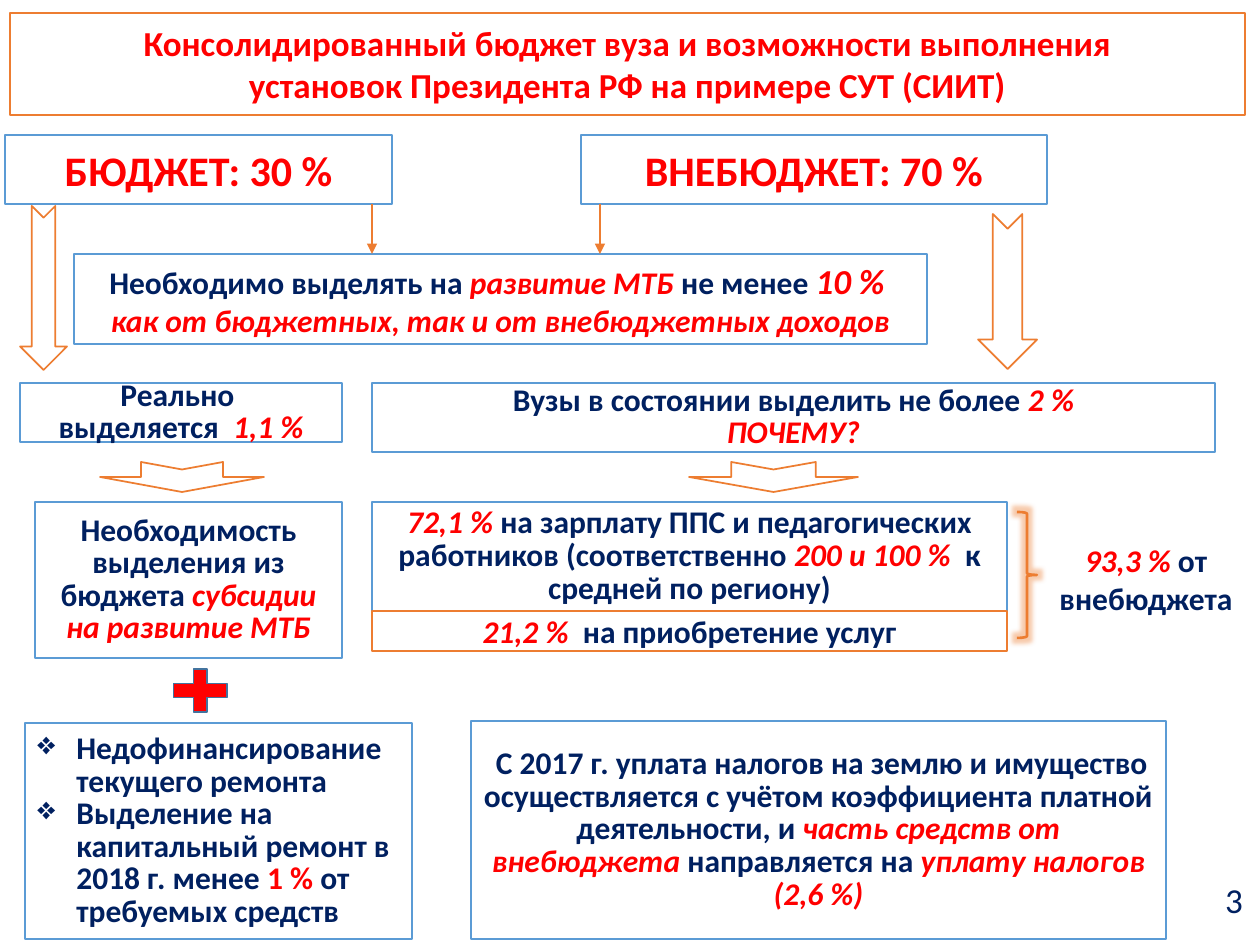
import pptx
import pptx.util
import pptx.dml.color
import pptx.enum.shapes
import pptx.enum.text
import pptx.oxml
import pptx.oxml.ns

RGBColor = pptx.dml.color.RGBColor
WHITE = RGBColor(0xFF, 0xFF, 0xFF)
RED = RGBColor(0xFF, 0x00, 0x00)
NAVY = RGBColor(0x00, 0x20, 0x60)
BLUE = RGBColor(0x5B, 0x9B, 0xD5)
DARK_BLUE = RGBColor(0x43, 0x73, 0x9E)
ORANGE = RGBColor(0xED, 0x7D, 0x31)

SHAPE = pptx.enum.shapes.MSO_SHAPE
ALIGN = pptx.enum.text.PP_ALIGN
NAMESPACE = pptx.oxml.ns.nsdecls("a")
PX_PER_INCH = 126
TIGHT = 18.6

PLAIN = {"color": NAVY, "size": 18, "bold": True, "italic": False}
STRONG = {**PLAIN, "color": RED}
ACCENT = {**STRONG, "italic": True}
ACCENT_LARGE = {**ACCENT, "size": 20}
TITLE = {**STRONG, "size": 20}
HEADING = {**STRONG, "size": 24}
NUMBER = {**PLAIN, "size": 20, "bold": False}

BOXES = [
    ((10, 13, 1235, 102), ORANGE, None, [
        [("Консолидированный бюджет вуза и возможности выполнения", TITLE)],
        [("установок Президента РФ на примере СУТ (СИИТ)", TITLE)]]),
    ((5, 135, 387, 69), BLUE, None, [[("БЮДЖЕТ: 30 %", HEADING)]]),
    ((581, 135, 466, 69), BLUE, None, [[("ВНЕБЮДЖЕТ: 70 %", HEADING)]]),
    ((74, 254, 853, 90), BLUE, None, [
        [("Необходимо выделять на ", PLAIN), ("развитие МТБ ", ACCENT),
         ("не менее ", PLAIN), ("10 %", ACCENT_LARGE),
         ("  как от бюджетных, так и от внебюджетных доходов", ACCENT)]]),
    ((20, 383, 322, 59), BLUE, TIGHT, [
        [("Реально ", PLAIN)],
        [("выделяется  ", PLAIN), ("1,1 %", ACCENT)]]),
    ((35, 502, 307, 156), BLUE, TIGHT, [
        [("Необходимость выделения из бюджета ", PLAIN),
         ("субсидии на развитие МТБ", ACCENT)]]),
    ((372, 383, 843, 69), BLUE, TIGHT, [
        [("Вузы в состоянии выделить не более ", PLAIN), ("2 %", ACCENT)],
        [("ПОЧЕМУ?", ACCENT)]]),
    ((372, 502, 635, 109), BLUE, TIGHT, [
        [("72,1 % ", ACCENT),
         ("на зарплату ППС и педагогических работников (соответственно ", PLAIN),
         ("200 и 100 %  ", ACCENT), ("к средней по региону)", PLAIN)]]),
    ((372, 611, 635, 40), ORANGE, None, [
        [("21,2 %", ACCENT), ("  на приобретение услуг", PLAIN)]]),
    ((1047, 516, 198, 126), None, None, [
        [("93,3 %", ACCENT), (" от", PLAIN)],
        [("внебюджета", PLAIN)]]),
    ((471, 721, 695, 218), BLUE, TIGHT, [
        [(" С 2017 г. уплата налогов на землю и имущество осуществляется "
          "с учётом коэффициента платной деятельности, и ", PLAIN),
         ("часть средств от внебюджета ", ACCENT),
         ("направляется на ", PLAIN), ("уплату налогов (2,6 %)", ACCENT)]]),
]
BULLET_BOX = ((25, 723, 387, 216), BLUE, TIGHT, [
    [("Недофинансирование текущего ремонта", PLAIN)],
    [("Выделение на капитальный ремонт в 2018 г. менее ", PLAIN),
     ("1 % ", STRONG), ("от требуемых средств", PLAIN)]])
PAGE_NUMBER = ((1213, 882, 42, 34), None, None, [[("3", NUMBER)]])

DOWN_ARROWS = [(20, 206, 47, 164), (100, 462, 164, 30),
               (978, 214, 59, 155), (689, 462, 169, 30)]
CONNECTOR_XS = (372, 600)
CONNECTOR_TOP, CONNECTOR_BOTTOM = 204, 254
BRACE = (1017, 512, 20, 126)
PLUS = (164, 661, 73, 59)


def px(value):
    return pptx.util.Emu(round(value * 914400 / PX_PER_INCH))


def add_outline(slide, kind, bounds, line, fill=WHITE, width=1):
    shape = slide.shapes.add_shape(kind, *map(px, bounds))
    shape.shadow.inherit = False
    if fill is None:
        shape.fill.background()
    else:
        shape.fill.solid()
        shape.fill.fore_color.rgb = fill
    if line is None:
        shape.line.fill.background()
    else:
        shape.line.color.rgb = line
        shape.line.width = pptx.util.Pt(width)
    return shape


def add_run(paragraph, text, style):
    run = paragraph.add_run()
    run.text = text
    formats = {"name": "Calibri", "size": pptx.util.Pt(style["size"]),
               "bold": style["bold"], "italic": style["italic"]}
    for name, value in formats.items():
        setattr(run.font, name, value)
    run.font.color.rgb = style["color"]


def add_box(slide, bounds, line, spacing, paragraphs, align=ALIGN.CENTER):
    shape = add_outline(slide, SHAPE.RECTANGLE, bounds, line)
    frame = shape.text_frame
    frame.word_wrap = True
    frame.vertical_anchor = pptx.enum.text.MSO_ANCHOR.MIDDLE
    for index, runs in enumerate(paragraphs):
        paragraph = frame.add_paragraph() if index else frame.paragraphs[0]
        paragraph.alignment = align
        if spacing:
            paragraph.line_spacing = pptx.util.Pt(spacing)
        for text, style in runs:
            add_run(paragraph, text, style)
    return shape


def add_bullets(shape):
    indent = px(39)
    for paragraph in shape.text_frame.paragraphs:
        properties = paragraph._p.get_or_add_pPr()
        properties.set("marL", str(indent))
        properties.set("indent", str(-indent))
        properties.append(pptx.oxml.parse_xml(f'<a:buChar {NAMESPACE} char="❖"/>'))


def add_down_arrow(slide, bounds):
    left, top, width, height = bounds
    offset = (width - height) / 2
    turned = (left + offset, top - offset, height, width)
    arrow = add_outline(slide, SHAPE.NOTCHED_RIGHT_ARROW, turned, ORANGE)
    arrow.rotation = 90


def add_connector(slide, x):
    connector = slide.shapes.add_connector(
        pptx.enum.shapes.MSO_CONNECTOR.STRAIGHT,
        px(x), px(CONNECTOR_TOP), px(x), px(CONNECTOR_BOTTOM))
    connector.line.color.rgb = ORANGE
    connector.line.width = pptx.util.Pt(1.5)
    connector.line._get_or_add_ln().append(
        pptx.oxml.parse_xml(f'<a:tailEnd {NAMESPACE} type="triangle"/>'))
    connector._element.spPr.append(pptx.oxml.parse_xml(f"<a:effectLst {NAMESPACE}/>"))


def add_glow(shape):
    effects = shape._element.spPr.find(pptx.oxml.ns.qn("a:effectLst"))
    effects.append(pptx.oxml.parse_xml(
        f'<a:glow {NAMESPACE} rad="63500"><a:srgbClr val="{ORANGE}">'
        '<a:alpha val="40000"/></a:srgbClr></a:glow>'))


def main():
    presentation = pptx.Presentation()
    presentation.slide_width, presentation.slide_height = px(1260), px(945)
    slide = presentation.slides.add_slide(presentation.slide_layouts[6])
    for box in BOXES:
        add_box(slide, *box)
    add_bullets(add_box(slide, *BULLET_BOX, align=ALIGN.LEFT))
    add_box(slide, *PAGE_NUMBER).text_frame.word_wrap = False
    for x in CONNECTOR_XS:
        add_connector(slide, x)
    for bounds in DOWN_ARROWS:
        add_down_arrow(slide, bounds)
    add_glow(add_outline(slide, SHAPE.RIGHT_BRACE, BRACE, ORANGE, None, 1.5))
    add_outline(slide, SHAPE.MATH_PLUS, PLUS, DARK_BLUE, RED)
    presentation.save("out.pptx")


if __name__ == "__main__":
    main()
